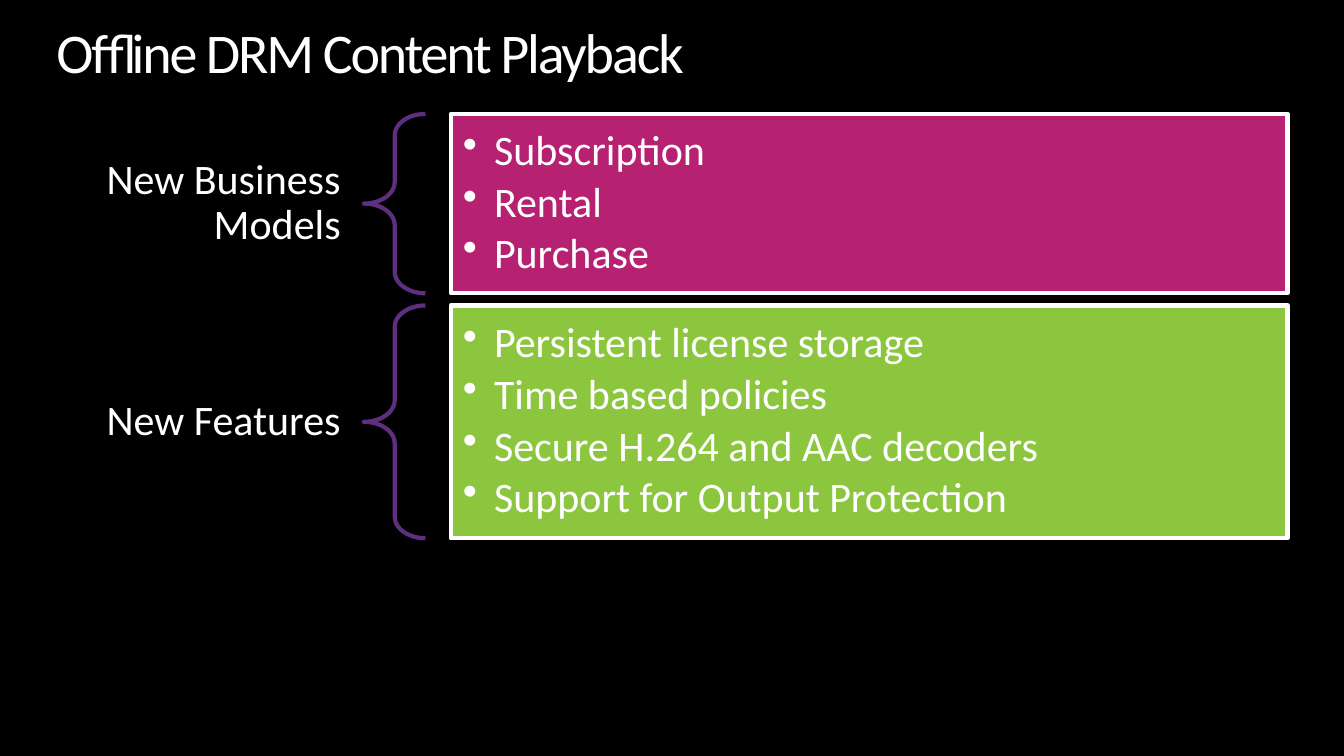
"""Build the slide on offline playback of DRM content."""
import pptx
import pptx.dml.color
import pptx.enum.shapes
import pptx.enum.text
import pptx.oxml
import pptx.oxml.ns
import pptx.util

Inches, Pt = pptx.util.Inches, pptx.util.Pt
RGBColor = pptx.dml.color.RGBColor
PRESET = pptx.enum.shapes.MSO_SHAPE
ALIGN = pptx.enum.text.PP_ALIGN
ANCHOR = pptx.enum.text.MSO_ANCHOR

BLACK = RGBColor(0x00, 0x00, 0x00)
WHITE = RGBColor(0xFF, 0xFF, 0xFF)
PURPLE = RGBColor(0x5E, 0x2F, 0x7E)
MAGENTA = RGBColor(0xB7, 0x21, 0x72)
GREEN = RGBColor(0x8C, 0xC6, 0x3F)

TITLE = "Offline DRM Content Playback"
TOPICS = [
    ("New Business Models", MAGENTA, 1.78,
     ["Subscription", "Rental", "Purchase"]),
    ("New Features", GREEN, 2.31,
     ["Persistent license storage", "Time based policies",
      "Secure H.264 and AAC decoders", "Support for Output Protection"]),
]

LEFT, TOP, GAP = 0.56, 1.13, 0.12
LABEL_WIDTH, BRACE_WIDTH = 3.05, 0.61
PANEL_LEFT, PANEL_WIDTH = 4.47, 8.3
BODY_SIZE = 30


def set_frame(frame, inset_x, inset_y, anchor):
    frame.word_wrap = True
    frame.vertical_anchor = anchor
    frame.margin_left = frame.margin_right = Inches(inset_x)
    frame.margin_top = frame.margin_bottom = Inches(inset_y)


def write(paragraph, text, size, align=ALIGN.LEFT):
    paragraph.alignment = align
    paragraph.line_spacing = 0.9
    run = paragraph.add_run()
    run.text = text
    run.font.size = Pt(size)
    run.font.name = "Calibri"
    run.font.color.rgb = WHITE
    return run


def add_bullet(paragraph):
    properties = paragraph._p.get_or_add_pPr()
    properties.set("marL", str(Inches(0.31)))
    properties.set("indent", str(-Inches(0.31)))
    bullet = pptx.oxml.parse_xml(
        f'<a:buChar {pptx.oxml.ns.nsdecls("a")} char="•"/>')
    properties.append(bullet)


def add_outlined(slide, preset, left, top, width, height, colour):
    shape = slide.shapes.add_shape(
        preset, Inches(left), Inches(top), Inches(width), Inches(height))
    shape.shadow.inherit = False
    shape.line.color.rgb = colour
    shape.line.width = Pt(3)
    return shape


def add_topic(slide, top, label, colour, height, points):
    heading = slide.shapes.add_textbox(
        Inches(LEFT), Inches(top), Inches(LABEL_WIDTH), Inches(height))
    set_frame(heading.text_frame, 0.23, 0.08, ANCHOR.MIDDLE)
    write(heading.text_frame.paragraphs[0], label, BODY_SIZE, ALIGN.RIGHT)

    brace = add_outlined(slide, PRESET.LEFT_BRACE, LEFT + LABEL_WIDTH, top,
                         BRACE_WIDTH, height, PURPLE)
    brace.fill.background()
    brace.adjustments[0] = 0.35
    brace.adjustments[1] = 0.5

    panel = add_outlined(slide, PRESET.RECTANGLE, PANEL_LEFT, top,
                         PANEL_WIDTH, height, WHITE)
    panel.fill.solid()
    panel.fill.fore_color.rgb = colour
    frame = panel.text_frame
    set_frame(frame, 0.12, 0.12, ANCHOR.MIDDLE)
    for index, point in enumerate(points):
        paragraph = frame.add_paragraph() if index else frame.paragraphs[0]
        add_bullet(paragraph)
        if index:
            paragraph.space_before = Pt(0.15 * BODY_SIZE)
        write(paragraph, point, BODY_SIZE)


def main():
    deck = pptx.Presentation()
    deck.slide_width, deck.slide_height = Inches(13.33), Inches(7.5)
    slide = deck.slides.add_slide(deck.slide_layouts[6])
    slide.background.fill.solid()
    slide.background.fill.fore_color.rgb = BLACK

    title = slide.shapes.add_textbox(
        Inches(LEFT), Inches(0.25), Inches(12.22), Inches(0.61))
    set_frame(title.text_frame, 0, 0, ANCHOR.TOP)
    title_run = write(title.text_frame.paragraphs[0], TITLE, 40)
    title_run.font._element.set("spc", "-150")

    top = TOP
    for label, colour, height, points in TOPICS:
        add_topic(slide, top, label, colour, height, points)
        top += height + GAP

    deck.save("out.pptx")


if __name__ == "__main__":
    main()
